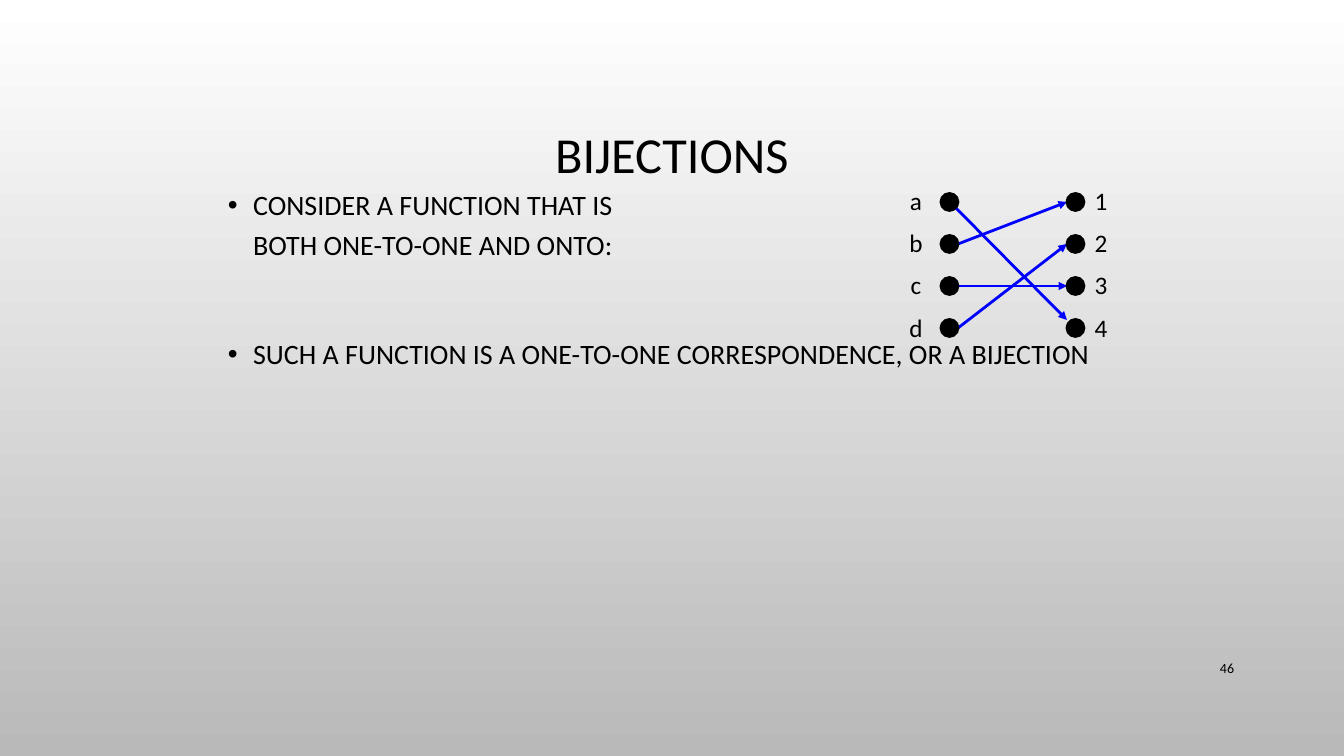
"""Builds the slide on bijections with its mapping diagram."""
from lxml import etree
from pptx import Presentation
from pptx.dml.color import RGBColor
from pptx.enum.shapes import MSO_CONNECTOR, MSO_SHAPE
from pptx.enum.text import MSO_ANCHOR, MSO_AUTO_SIZE, PP_ALIGN
from pptx.oxml.ns import qn
from pptx.util import Pt

PX = 914400 / 100.8
FONT = "Calibri"
BLACK = RGBColor(0x00, 0x00, 0x00)
WHITE = RGBColor(0xFF, 0xFF, 0xFF)
GREY = RGBColor(0xB9, 0xB9, 0xB9)
BLUE = RGBColor(0x00, 0x00, 0xFF)
STRAIGHT = MSO_CONNECTOR.STRAIGHT
OVAL = MSO_SHAPE.OVAL
TOP, MIDDLE = MSO_ANCHOR.TOP, MSO_ANCHOR.MIDDLE
LEFT, CENTER, RIGHT = PP_ALIGN.LEFT, PP_ALIGN.CENTER, PP_ALIGN.RIGHT

TITLE_ONLY = 5
DOT = 17
ROW_STEP = 42
FIRST_ROW = 202
DOMAIN_X, RANGE_X = 941, 1067
LABEL_TOP, LABEL_WIDTH, LABEL_HEIGHT = 168, 34, 179
DOMAIN_LABEL_X, RANGE_LABEL_X = 899, 1084
DOMAIN, CODOMAIN = "abcd", "1234"
ARROWS = [(2, 2, 0), (0, 3, -8), (3, 1, 0), (1, 0, 0)]
BULLETS = [
    (["CONSIDER A FUNCTION THAT IS", "BOTH ONE-TO-ONE AND ONTO:"], 0),
    (["SUCH A FUNCTION IS A ONE-TO-ONE CORRESPONDENCE, OR A BIJECTION"], 49),
]


def px(value):
    """Turn pixels into EMU."""
    return round(value * PX)


def row_y(row):
    """Return the centre height of a diagram row."""
    return FIRST_ROW + row * ROW_STEP


def add_run(paragraph, text, size):
    """Add one formatted run."""
    run = paragraph.add_run()
    run.text = text
    run.font.name = FONT
    run.font.size = Pt(size)
    run.font.color.rgb = BLACK


def add_text(slide, box, lines, size, align=CENTER, anchor=TOP, spacing=1.0, wrap=True):
    """Add a text box with one paragraph for each line."""
    frame = slide.shapes.add_textbox(*map(px, box)).text_frame
    frame.word_wrap = wrap
    frame.vertical_anchor = anchor
    for index, line in enumerate(lines):
        paragraph = frame.add_paragraph() if index else frame.paragraphs[0]
        paragraph.alignment = align
        paragraph.line_spacing = spacing
        add_run(paragraph, line, size)


def add_bullets(slide, box):
    """Add the bulleted statements."""
    frame = slide.shapes.add_textbox(*map(px, box)).text_frame
    frame.word_wrap = True
    for index, (lines, space) in enumerate(BULLETS):
        paragraph = frame.add_paragraph() if index else frame.paragraphs[0]
        paragraph.alignment = LEFT
        paragraph.line_spacing = 1.2
        if space:
            paragraph.space_before = Pt(space)
        properties = paragraph._p.get_or_add_pPr()
        properties.set("marL", "228600")
        properties.set("indent", "-228600")
        etree.SubElement(properties, qn("a:buFont")).set("typeface", "Arial")
        etree.SubElement(properties, qn("a:buChar")).set("char", "•")
        for number, line in enumerate(lines):
            if number:
                paragraph.add_line_break()
            add_run(paragraph, line, 20)


def add_dot(slide, left, row):
    """Add the dot of one set element."""
    dot = slide.shapes.add_shape(OVAL, px(left), px(row_y(row) - DOT / 2), px(DOT), px(DOT))
    dot.shadow.inherit = False
    dot.fill.solid()
    dot.fill.fore_color.rgb = BLACK
    dot.line.color.rgb = BLACK
    dot.line.width = Pt(2)


def add_arrow(slide, start, end):
    """Add a blue arrow between two points."""
    arrow = slide.shapes.add_connector(STRAIGHT, *map(px, start + end))
    arrow.line.color.rgb = BLUE
    arrow.line.width = Pt(2)
    etree.SubElement(arrow.line._get_or_add_ln(), qn("a:tailEnd")).set("type", "triangle")
    etree.SubElement(arrow._element.spPr, qn("a:effectLst"))


def add_mapping(slide):
    """Add the labelled dots and the arrows of the function."""
    for left, labels in ((RANGE_LABEL_X, CODOMAIN), (DOMAIN_LABEL_X, DOMAIN)):
        box = (left, LABEL_TOP, LABEL_WIDTH, LABEL_HEIGHT)
        add_text(slide, box, labels, 18, spacing=1.4, wrap=False)
    for source, target, shift in ARROWS:
        start = (DOMAIN_X + DOT + shift, row_y(source))
        add_arrow(slide, start, (RANGE_X, row_y(target) + shift))
    for left in (DOMAIN_X, RANGE_X):
        for row in range(len(DOMAIN)):
            add_dot(slide, left, row)


def set_background(slide):
    """Fill the background from white down to grey."""
    fill = slide.background.fill
    fill.gradient()
    fill.gradient_angle = 270
    for stop, color in zip(fill.gradient_stops, (WHITE, GREY)):
        stop.color.rgb = color


def set_title(slide, text):
    """Place and format the title."""
    title = slide.shapes.title
    title.left, title.top, title.width, title.height = map(px, (101, 69, 1142, 176))
    frame = title.text_frame
    frame.auto_size = MSO_AUTO_SIZE.NONE
    frame.vertical_anchor = MIDDLE
    paragraph = frame.paragraphs[0]
    paragraph.alignment = CENTER
    paragraph.line_spacing = 0.9
    add_run(paragraph, text, 36)


def main():
    """Build and save the presentation."""
    presentation = Presentation()
    presentation.slide_width, presentation.slide_height = px(1344), px(756)
    slide = presentation.slides.add_slide(presentation.slide_layouts[TITLE_ONLY])
    set_background(slide)
    add_text(slide, (1159, 648, 85, 40), ["46"], 10, RIGHT, MIDDLE)
    set_title(slide, "BIJECTIONS")
    add_bullets(slide, (218, 176, 907, 499))
    add_mapping(slide)
    presentation.save("out.pptx")


if __name__ == "__main__":
    main()
